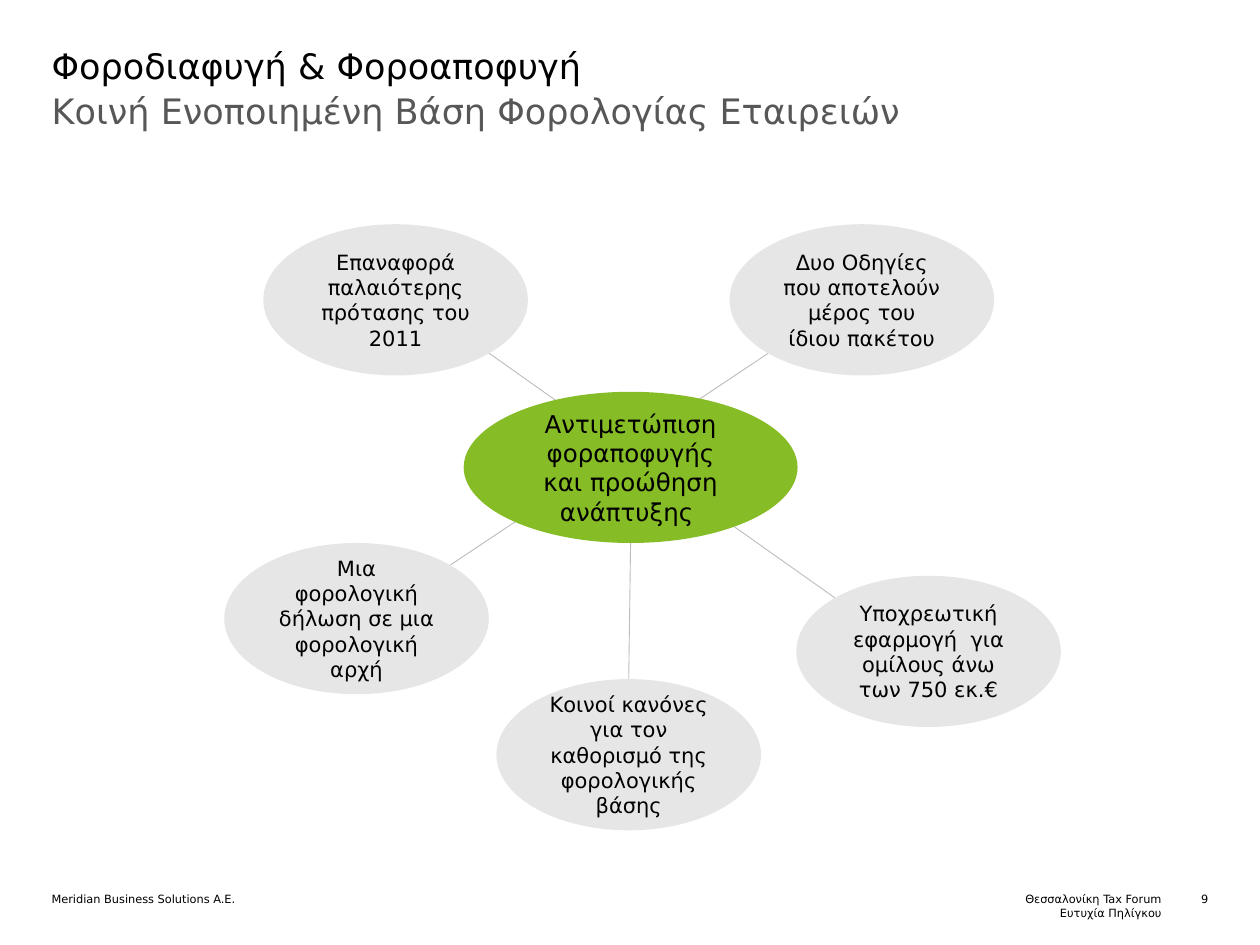
"""Build a slide with a central idea and five linked ellipses."""
from math import sqrt

from lxml.etree import SubElement
from pptx import Presentation
from pptx.dml.color import RGBColor
from pptx.enum.shapes import MSO_CONNECTOR as Connector, MSO_SHAPE as Shape
from pptx.enum.text import MSO_ANCHOR as Anchor, MSO_AUTO_SIZE as AutoSize, PP_ALIGN as Align
from pptx.oxml.ns import qn
from pptx.util import Inches, Pt

FONT = "DejaVu Sans"
COLORS = {"text": "000000", "subtitle": "575757", "node": "E7E6E6",
          "hub": "86BC25", "line": "BBBCBC"}
NODE_SIZE = (2.1, 1.2)
HUB = (3.68, 3.11, 2.65, 1.2)
NODES = {
    "rules": (3.94, 5.39, "Κοινοί κανόνες για τον καθορισμό της φορολογικής βάσης"),
    "directives": (5.79, 1.78, "Δυο Οδηγίες που αποτελούν μέρος του ίδιου πακέτου"),
    "proposal": (2.09, 1.78, "Επαναφορά παλαιότερης πρότασης του 2011"),
    "groups": (6.32, 4.57, "Υποχρεωτική εφαρμογή  για ομίλους άνω των 750 εκ.€"),
    "return": (1.78, 4.31, "Μια φορολογική δήλωση σε μια φορολογική αρχή"),
}


def color(name):
    return RGBColor.from_string(COLORS[name])


def set_frame(frame, inset, anchor):
    frame.word_wrap = True
    frame.auto_size = AutoSize.NONE
    frame.vertical_anchor = anchor
    frame.margin_left = frame.margin_right = Inches(inset)
    frame.margin_top = frame.margin_bottom = Inches(inset)


def add_text(para, text, size, align=Align.LEFT, shade="text"):
    para.alignment = align
    span = para.add_run()
    span.text = text
    span.font.name = FONT
    span.font.size = Pt(size)
    span.font.color.rgb = color(shade)


def place(shape, left, top, width, height):
    shape.left, shape.top = Inches(left), Inches(top)
    shape.width, shape.height = Inches(width), Inches(height)


def fill_placeholder(holder, bounds, text, shade):
    place(holder, *bounds)
    set_frame(holder.text_frame, 0, Anchor.TOP)
    para = holder.text_frame.paragraphs[0]
    para.space_before = Pt(0)
    add_text(para, text, 20, shade=shade)
    return para


def remove_bullet(para):
    properties = para._p.get_or_add_pPr()
    properties.set("marL", "0")
    properties.set("indent", "0")
    SubElement(properties, qn("a:buNone"))


def add_footer(page, bounds, lines, align=Align.LEFT):
    box = page.shapes.add_textbox(*map(Inches, bounds))
    frame = box.text_frame
    set_frame(frame, 0, Anchor.TOP)
    for index, line in enumerate(lines):
        para = frame.add_paragraph() if index else frame.paragraphs[0]
        add_text(para, line, 6.5, align)


def add_ellipse(page, bounds, text, size, shade):
    ellipse = page.shapes.add_shape(Shape.OVAL, *map(Inches, bounds))
    ellipse.shadow.inherit = False
    ellipse.fill.solid()
    ellipse.fill.fore_color.rgb = color(shade)
    ellipse.line.fill.background()
    set_frame(ellipse.text_frame, 0.1, Anchor.MIDDLE)
    add_text(ellipse.text_frame.paragraphs[0], text, size, Align.CENTER)


def diagonal_point(name, across, down):
    """Return the point on a node's rim in the given diagonal direction."""
    left, top, _ = NODES[name]
    width, height = NODE_SIZE
    return (left + width / 2 * (1 + across / sqrt(2)),
            top + height / 2 * (1 + down / sqrt(2)))


def add_line(page, start, end):
    line = page.shapes.add_connector(Connector.STRAIGHT, *map(Inches, start + end))
    line.line.color.rgb = color("line")
    line.line.width = Pt(0.5)
    SubElement(line._element.spPr, qn("a:effectLst"))


def main():
    deck = Presentation()
    deck.slide_width, deck.slide_height = Inches(10), Inches(7.5)
    page = deck.slides.add_slide(deck.slide_layouts[1])

    fill_placeholder(page.shapes.title, (0.41, 0.35, 9.18, 0.76),
                     "Φοροδιαφυγή & Φοροαποφυγή", "text")
    subtitle = fill_placeholder(page.placeholders[1], (0.41, 0.71, 9.18, 0.83),
                                "Κοινή Ενοποιημένη Βάση Φορολογίας Εταιρειών", "subtitle")
    subtitle.space_after = Pt(10)
    remove_bullet(subtitle)

    add_footer(page, (5.2, 7.08, 4.02, 0.22),
               ["Θεσσαλονίκη Tax Forum", "Ευτυχία Πηλίγκου"], Align.RIGHT)
    add_footer(page, (0.41, 7.08, 4.39, 0.11), ["Meridian Business Solutions A.Ε."])
    add_footer(page, (9.34, 7.08, 0.25, 0.11), ["9"], Align.RIGHT)

    add_line(page, diagonal_point("proposal", 1, 1), diagonal_point("groups", -1, -1))
    add_line(page, diagonal_point("return", 1, -1), diagonal_point("directives", -1, 1))
    hub_left, hub_top, hub_width, hub_height = HUB
    rules_left, rules_top, _ = NODES["rules"]
    add_line(page, (hub_left + hub_width / 2, hub_top + hub_height),
             (rules_left + NODE_SIZE[0] / 2, rules_top))

    for left, top, text in NODES.values():
        add_ellipse(page, (left, top, *NODE_SIZE), text, 12, "node")
    add_ellipse(page, HUB, "Αντιμετώπιση φοραποφυγής και προώθηση ανάπτυξης ", 14, "hub")

    deck.save("out.pptx")


if __name__ == "__main__":
    main()
